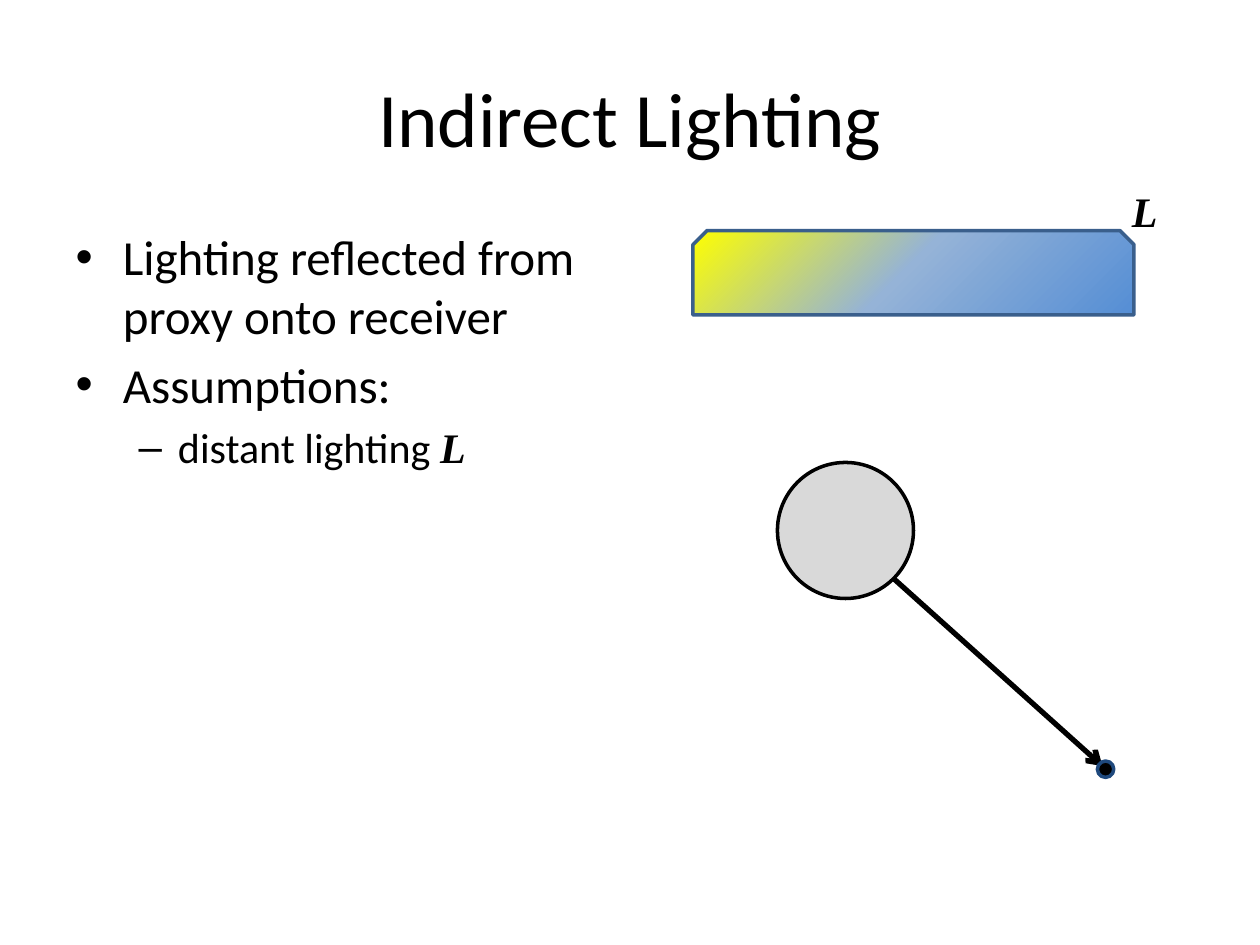
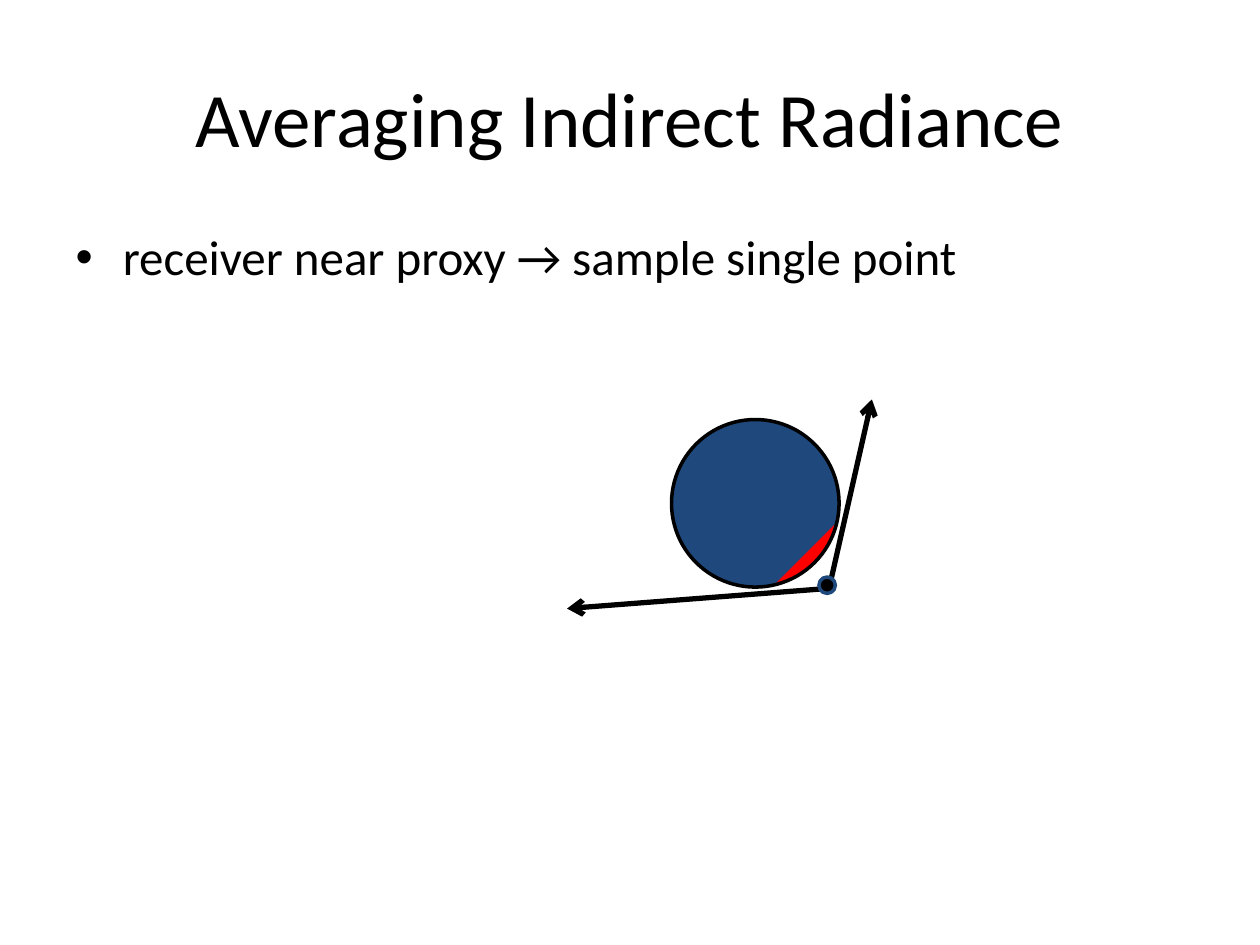
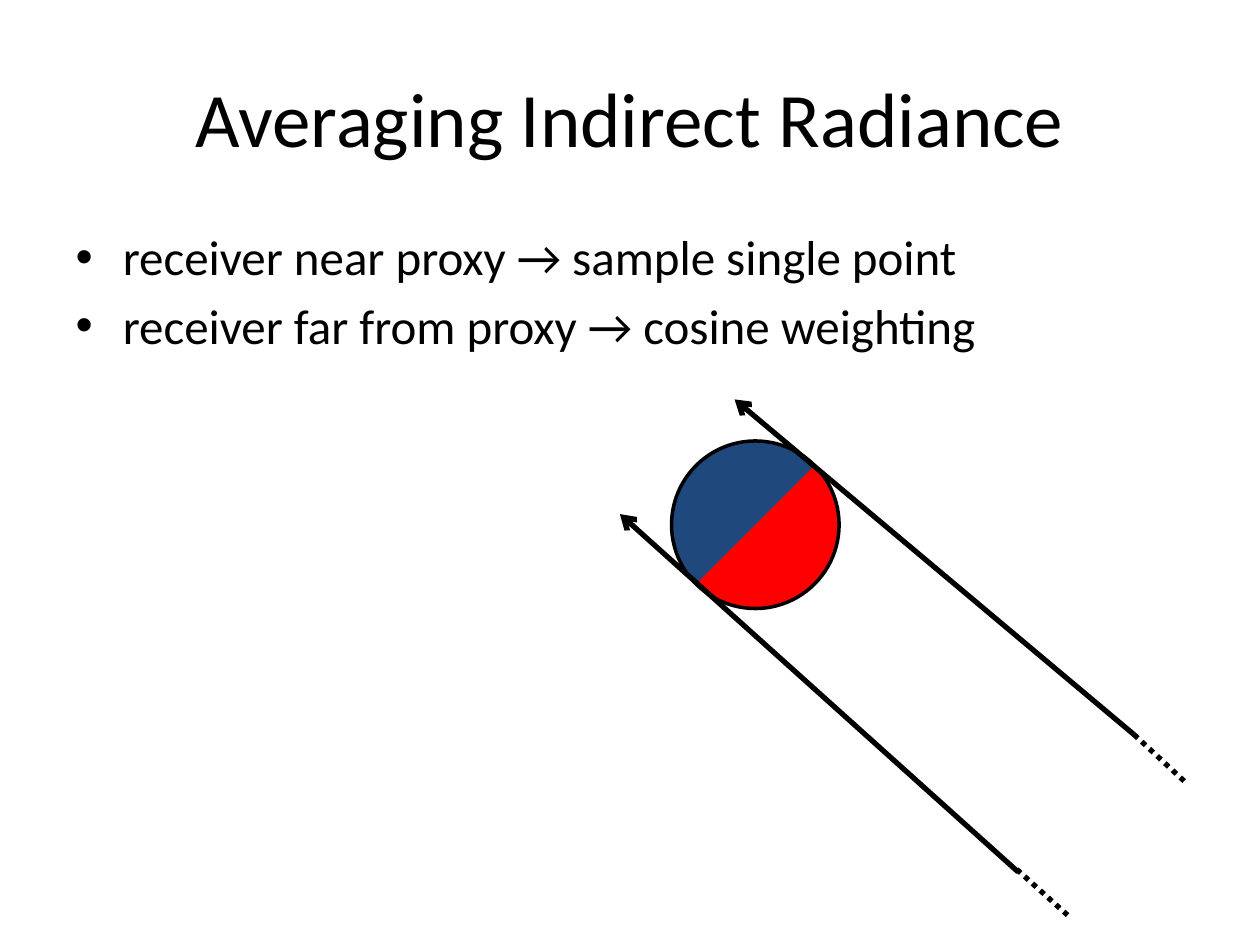
from lxml.etree import SubElement
from pptx import Presentation
from pptx.dml.color import RGBColor
from pptx.enum.dml import MSO_LINE
from pptx.enum.shapes import MSO_CONNECTOR as CONNECTOR, MSO_SHAPE as SHAPE
from pptx.enum.text import MSO_AUTO_SIZE as AUTO_SIZE, PP_ALIGN as ALIGN
from pptx.oxml.ns import qn
from pptx.util import Inches, Pt

# Shared style
COLORS = {
    "black": "000000", "gray": "D9D9D9", "navy": "1F497D", "red": "FF0000",
    "yellow": "FFFF00", "haze": "95B3D7", "sky": "558ED5", "sky edge": "3A5F8C",
}
TEXT_FONT, SYMBOL_FONT = "Calibri", "Times New Roman"
TITLE_SIZE, BULLET_SIZES = 44, (28, 24)
TITLE_BOX = (0.5, 0.3, 9, 1.25)
BODY_LEFT, BODY_TOP, BODY_HEIGHT = 0.5, 1.75, 4.95
RECEIVER_SIZE = 0.13

# Bullets are (level, text runs); a run equal to SYMBOL is set as a symbol
SYMBOL = "L"
NEAR = (0, ["receiver near proxy → sample single point"])
FAR = (0, ["receiver far from proxy → cosine weighting"])

# Proxies are (left, top, diameter, fill); rays and dots are (start, end)
SLIDES = [
    {
        "title": "Indirect Lighting",
        "body width": 4.67,
        "bullets": [
            (0, ["Lighting reflected from proxy onto receiver"]),
            (0, ["Assumptions:"]),
            (1, ["distant lighting ", SYMBOL]),
        ],
        "proxy": (6.17, 3.67, 1.08, "gray"),
        "receiver": (8.71, 6.04),
        "rays": [((7.09, 4.59), (8.75, 6.08))],
        "light": (5.5, 1.83, 3.5, 0.67),
        "light label": (8.75, 1.42, 0.67, 0.5),
    },
    {
        "title": "Averaging Indirect Radiance",
        "body width": 8.58,
        "bullets": [NEAR],
        "proxy": (5.33, 3.33, 1.33,
                  [(0, "navy"), (80, "navy"), (80, "red"), (100, "red")]),
        "rays": [((6.58, 4.67), (6.92, 3.17)), ((6.58, 4.67), (4.5, 4.83))],
        "receiver": (6.5, 4.58),
    },
    {
        "title": "Averaging Indirect Radiance",
        "body width": 9,
        "bullets": [NEAR, FAR],
        "proxy": (5.33, 3.5, 1.33,
                  [(0, "navy"), (50, "navy"), (50, "red"), (100, "red")]),
        "rays": [((8.08, 6.92), (4.92, 4.08)), ((9, 5.83), (5.83, 3.17))],
        "dots": [((9, 5.83), (9.41, 6.21)), ((8.07, 6.9), (8.48, 7.27))],
    },
]
LIGHT_STOPS = [(0, "yellow"), (48, "haze"), (100, "sky")]


def color(name):
    return RGBColor.from_string(COLORS[name])


def inches(values):
    return [Inches(value) for value in values]


def place(shape, box):
    shape.left, shape.top, shape.width, shape.height = inches(box)


def add_run(paragraph, text, size):
    run = paragraph.add_run()
    run.text = text
    run.font.size = Pt(size)
    run.font.color.rgb = color("black")
    run.font.name = TEXT_FONT
    if text == SYMBOL:
        run.font.name = SYMBOL_FONT
        run.font.bold = run.font.italic = True


def fill_gradient(shape, stops):
    """Fill diagonally, from top left to bottom right."""
    shape.fill.gradient()
    shape.fill.gradient_angle = 315
    stop_list = shape._element.spPr.find(qn("a:gradFill")).find(qn("a:gsLst"))
    for stop in list(stop_list):
        stop_list.remove(stop)
    for percent, name in stops:
        stop = SubElement(stop_list, qn("a:gs"), pos=str(percent * 1000))
        SubElement(stop, qn("a:srgbClr"), val=COLORS[name])


def add_figure(slide, kind, box, fill, edge):
    shape = slide.shapes.add_shape(kind, *inches(box))
    shape.shadow.inherit = False
    if isinstance(fill, list):
        fill_gradient(shape, fill)
    else:
        shape.fill.solid()
        shape.fill.fore_color.rgb = color(fill)
    shape.line.color.rgb = color(edge)
    shape.line.width = Pt(2)


def add_line(slide, start, end, dotted=False):
    """Draw a ray with an arrowhead, or its dotted continuation."""
    connector = slide.shapes.add_connector(CONNECTOR.STRAIGHT, *inches(start + end))
    connector.line.color.rgb = color("black")
    connector.line.width = Pt(3)
    if dotted:
        connector.line.dash_style = MSO_LINE.ROUND_DOT
    else:
        SubElement(connector.line._get_or_add_ln(), qn("a:tailEnd"), type="arrow")
    SubElement(connector._element.spPr, qn("a:effectLst"))


def add_text(slide, content):
    title = slide.shapes.title
    place(title, TITLE_BOX)
    add_run(title.text_frame.paragraphs[0], content["title"], TITLE_SIZE)

    body = slide.placeholders[1]
    place(body, (BODY_LEFT, BODY_TOP, content["body width"], BODY_HEIGHT))
    frame = body.text_frame
    for index, (level, runs) in enumerate(content["bullets"]):
        paragraph = frame.add_paragraph() if index else frame.paragraphs[0]
        paragraph.level = level
        for text in runs:
            add_run(paragraph, text, BULLET_SIZES[level])


def add_light(slide, box, label_box):
    add_figure(slide, SHAPE.SNIP_2_SAME_RECTANGLE, box, LIGHT_STOPS, "sky edge")
    frame = slide.shapes.add_textbox(*inches(label_box)).text_frame
    frame.word_wrap = True
    frame.auto_size = AUTO_SIZE.SHAPE_TO_FIT_TEXT
    frame.paragraphs[0].alignment = ALIGN.CENTER
    add_run(frame.paragraphs[0], SYMBOL, 24)


def add_diagram(slide, content):
    left, top, diameter, fill = content["proxy"]
    add_figure(slide, SHAPE.OVAL, (left, top, diameter, diameter), fill, "black")
    # On the first slide the arrowhead lies below the other parts
    for start, end in content["rays"]:
        add_line(slide, start, end)
    for start, end in content.get("dots", []):
        add_line(slide, start, end, dotted=True)
    if "receiver" in content:
        box = content["receiver"] + (RECEIVER_SIZE, RECEIVER_SIZE)
        add_figure(slide, SHAPE.OVAL, box, "black", "navy")
    if "light" in content:
        add_light(slide, content["light"], content["light label"])


def main():
    presentation = Presentation()
    presentation.slide_width, presentation.slide_height = inches((10, 7.5))
    for content in SLIDES:
        slide = presentation.slides.add_slide(presentation.slide_layouts[1])
        add_text(slide, content)
        add_diagram(slide, content)
    presentation.save("out.pptx")


if __name__ == "__main__":
    main()
